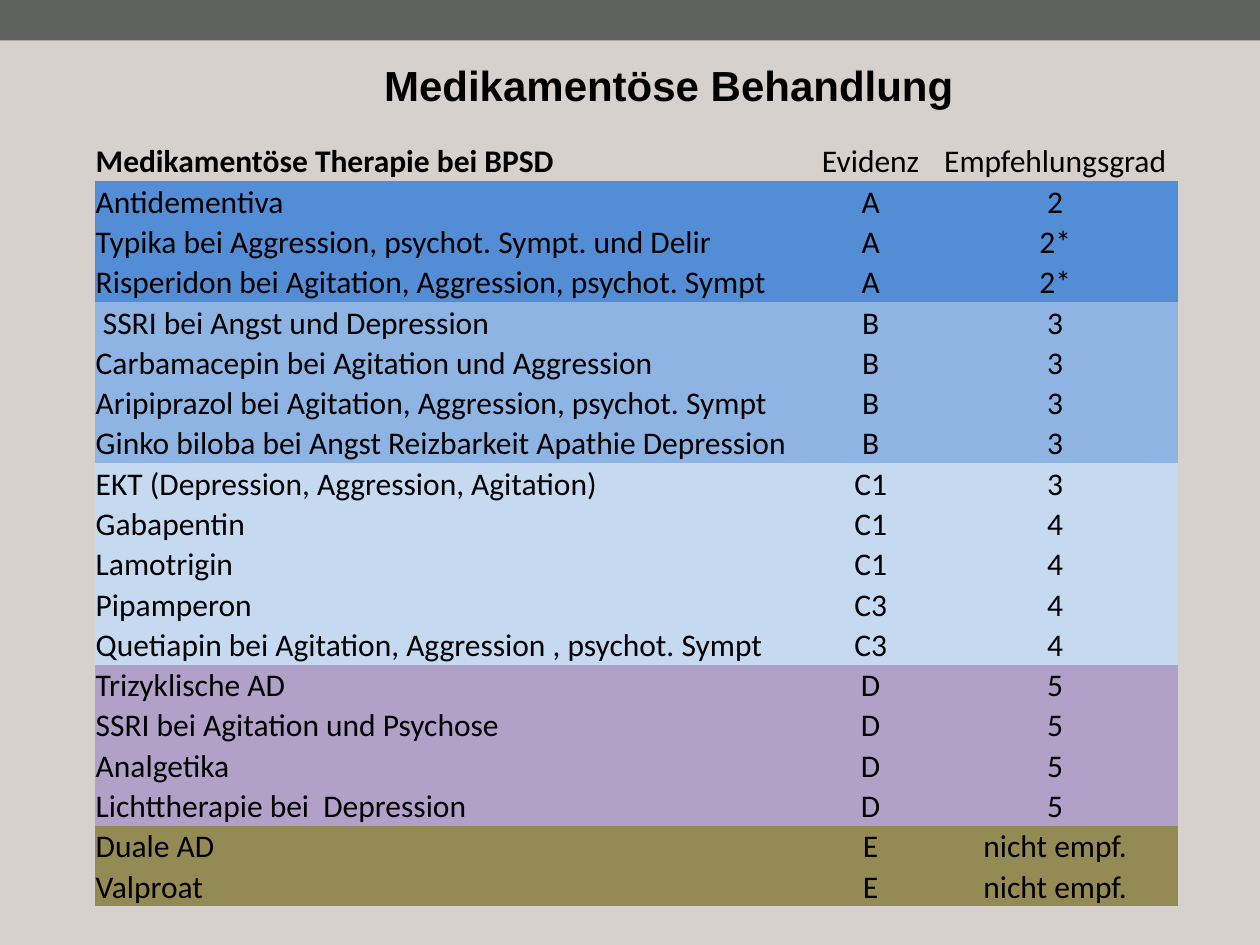
from dataclasses import dataclass, field

from pptx import Presentation
from pptx.dml.color import RGBColor
from pptx.enum.shapes import MSO_SHAPE
from pptx.enum.text import MSO_ANCHOR, PP_ALIGN
from pptx.oxml.ns import qn
from pptx.util import Inches, Pt


@dataclass
class Theme:
    background: str = "D6D1CD"
    band: str = "5F625F"
    text: str = "000000"
    title_font: str = "Arial"
    title_size: int = 24
    table_font: str = "Calibri"
    table_size: int = 18
    evidence: dict = field(default_factory=lambda: {
        "A": "538DD5", "B": "8DB4E2", "C": "C5D9F1", "D": "B1A0C7", "E": "948A54",
    })


theme = Theme()
NO_STYLE_NO_GRID = "{2D5ABB26-0587-4C30-8999-92F81FD0307C}"

header = ("Medikamentöse Therapie bei BPSD", "Evidenz", "Empfehlungsgrad")
therapies = [
    ("Antidementiva", "A", "2"),
    ("Typika bei Aggression, psychot. Sympt. und Delir", "A", "2*"),
    ("Risperidon bei Agitation, Aggression, psychot. Sympt", "A", "2*"),
    (" SSRI bei Angst und Depression", "B", "3"),
    ("Carbamacepin bei Agitation und Aggression", "B", "3"),
    ("Aripiprazol bei Agitation, Aggression, psychot. Sympt", "B", "3"),
    ("Ginko biloba bei Angst Reizbarkeit Apathie Depression", "B", "3"),
    ("EKT (Depression, Aggression, Agitation)", "C1", "3"),
    ("Gabapentin", "C1", "4"),
    ("Lamotrigin", "C1", "4"),
    ("Pipamperon", "C3", "4"),
    ("Quetiapin bei Agitation, Aggression , psychot. Sympt", "C3", "4"),
    ("Trizyklische AD", "D", "5"),
    ("SSRI bei Agitation und Psychose", "D", "5"),
    ("Analgetika", "D", "5"),
    ("Lichttherapie bei  Depression", "D", "5"),
    ("Duale AD", "E", "nicht empf."),
    ("Valproat", "E", "nicht empf."),
]
rows = [header, *therapies]
column_widths = (5.67, 0.98, 1.95)
row_height = 0.32


def add_run(paragraph, text, font_name, size, bold):
    run = paragraph.add_run()
    run.text = text
    run.font.name = font_name
    run.font.size = Pt(size)
    run.font.bold = bold
    run.font.color.rgb = RGBColor.from_string(theme.text)


prs = Presentation()
prs.slide_width = Inches(10)
prs.slide_height = Inches(7.5)
slide = prs.slides.add_slide(prs.slide_layouts[6])
slide.background.fill.solid()
slide.background.fill.fore_color.rgb = RGBColor.from_string(theme.background)

band = slide.shapes.add_shape(MSO_SHAPE.RECTANGLE, 0, 0, prs.slide_width, Inches(0.32))
band.shadow.inherit = False
band.fill.solid()
band.fill.fore_color.rgb = RGBColor.from_string(theme.band)
band.line.fill.background()

table_frame = slide.shapes.add_table(
    len(rows), len(column_widths), Inches(0.75), Inches(1.12),
    Inches(sum(column_widths)), Inches(row_height * len(rows)),
)
table_frame._element.find(".//" + qn("a:tableStyleId")).text = NO_STYLE_NO_GRID
therapy_table = table_frame.table
therapy_table.first_row = False
therapy_table.horz_banding = False

for column, width in zip(therapy_table.columns, column_widths):
    column.width = Inches(width)

for row_index, (row, entries) in enumerate(zip(therapy_table.rows, rows)):
    row.height = Inches(row_height)
    for column_index, (cell, entry) in enumerate(zip(row.cells, entries)):
        cell.margin_left = cell.margin_right = cell.margin_top = Inches(0.01)
        cell.margin_bottom = 0
        cell.vertical_anchor = MSO_ANCHOR.BOTTOM
        if row_index == 0:
            cell.fill.background()
        else:
            cell.fill.solid()
            cell.fill.fore_color.rgb = RGBColor.from_string(theme.evidence[entries[1][0]])
        paragraph = cell.text_frame.paragraphs[0]
        paragraph.alignment = PP_ALIGN.CENTER if column_index else PP_ALIGN.LEFT
        is_heading = row_index == 0 and column_index == 0
        add_run(paragraph, entry, theme.table_font, theme.table_size, is_heading)

title = slide.shapes.add_textbox(Inches(2.95), Inches(0.42), Inches(4.76), Inches(0.5))
title.text_frame.word_wrap = False
add_run(title.text_frame.paragraphs[0], "Medikamentöse Behandlung",
        theme.title_font, theme.title_size, True)

prs.save("out.pptx")
